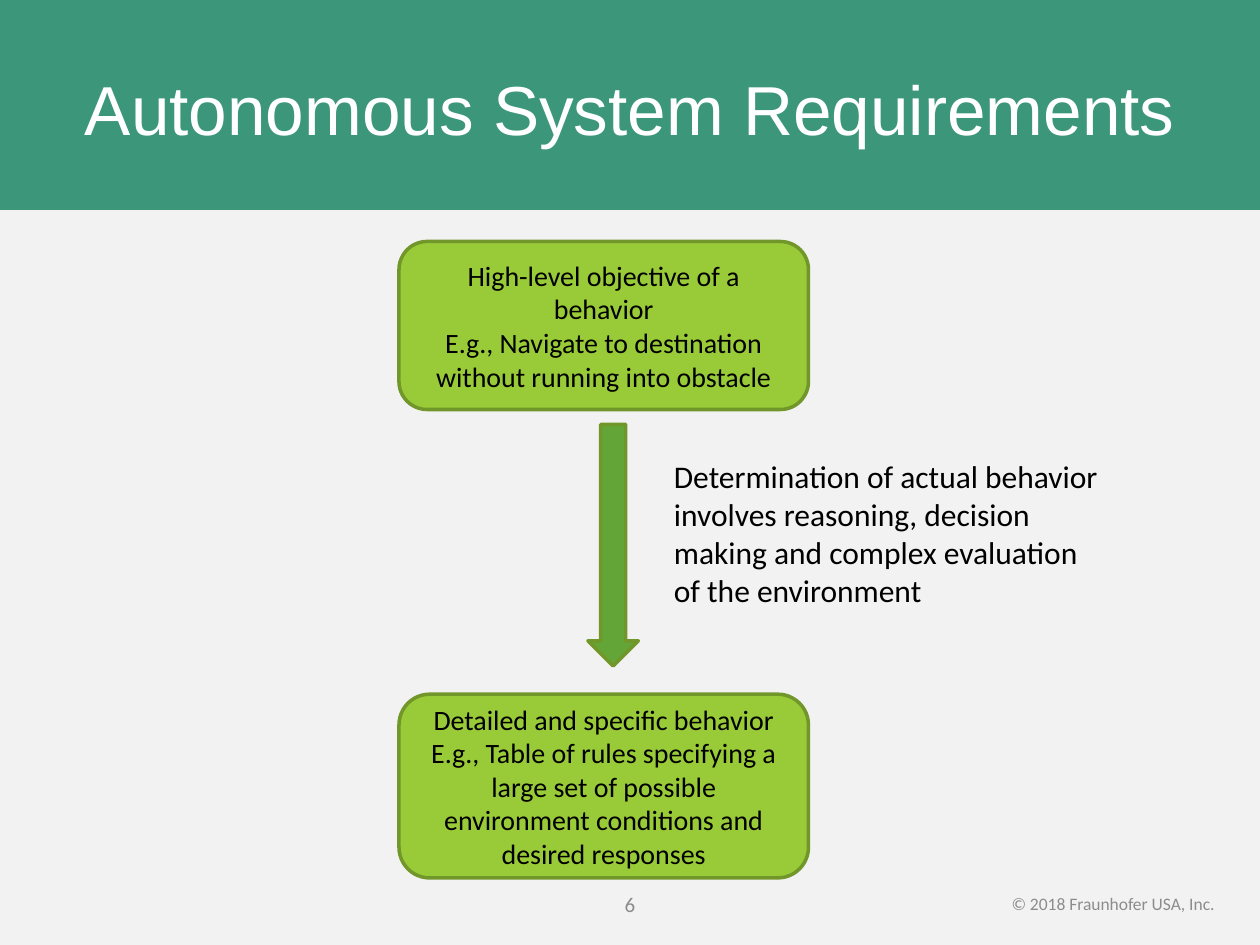
from dataclasses import dataclass
from typing import Optional

from pptx import Presentation
from pptx.dml.color import RGBColor
from pptx.enum.shapes import MSO_SHAPE
from pptx.enum.text import MSO_ANCHOR, PP_ALIGN
from pptx.util import Pt

WHITE = RGBColor(0xFF, 0xFF, 0xFF)
BLACK = RGBColor(0, 0, 0)
GRAY = RGBColor(0x8C, 0x8C, 0x8C)
PALE = RGBColor(0xF2, 0xF2, 0xF2)
TEAL = RGBColor(0x3C, 0x96, 0x79)
LIME = RGBColor(0x99, 0xCB, 0x38)
GREEN = RGBColor(0x63, 0xA5, 0x37)
OLIVE = RGBColor(0x71, 0x96, 0x29)


@dataclass
class Area:
    left: float
    top: float
    width: float
    height: float

    def lengths(self) -> list:
        return [Pt(n) for n in (self.left, self.top, self.width, self.height)]


@dataclass
class Text:
    lines: list[str]
    size: float
    color: RGBColor = BLACK
    font: str = "Calibri"
    align: PP_ALIGN = PP_ALIGN.CENTER
    anchor: MSO_ANCHOR = MSO_ANCHOR.MIDDLE


@dataclass
class Block:
    kind: MSO_SHAPE
    area: Area
    fill: RGBColor
    edge: Optional[RGBColor] = None
    text: Optional[Text] = None


@dataclass
class Label:
    area: Area
    text: Text


def write(shape, text: Text) -> None:
    frame = shape.text_frame
    frame.word_wrap = True
    frame.vertical_anchor = text.anchor
    frame.text = "\n".join(text.lines)
    style = {"name": text.font, "size": Pt(text.size)}
    for para in frame.paragraphs:
        para.alignment = text.align
        for run in para.runs:
            for key, value in style.items():
                setattr(run.font, key, value)
            run.font.color.rgb = text.color


def draw_block(slide, block: Block) -> None:
    shape = slide.shapes.add_shape(block.kind, *block.area.lengths())
    shape.shadow.inherit = False
    shape.fill.solid()
    shape.fill.fore_color.rgb = block.fill
    if block.edge is None:
        shape.line.fill.background()
    else:
        shape.line.color.rgb = block.edge
        shape.line.width = Pt(2)
    if block.text:
        write(shape, block.text)


def draw_label(slide, label: Label) -> None:
    write(slide.shapes.add_textbox(*label.area.lengths()), label.text)


# Header band, the two behavior levels and the arrow between them
BLOCKS = [
    Block(MSO_SHAPE.RECTANGLE, Area(0, 0, 720, 120), TEAL),
    Block(MSO_SHAPE.ROUNDED_RECTANGLE, Area(228, 138, 234, 96), LIME, OLIVE,
          Text(["High-level objective of a behavior",
                "E.g., Navigate to destination without running into obstacle"],
               16)),
    Block(MSO_SHAPE.ROUNDED_RECTANGLE, Area(228, 396.7, 234, 105), LIME, OLIVE,
          Text(["Detailed and specific behavior",
                "E.g., Table of rules specifying a large set of possible "
                "environment conditions and desired responses"], 16)),
    Block(MSO_SHAPE.DOWN_ARROW, Area(336, 242.6, 28.8, 138), GREEN, OLIVE),
]

# Title, note beside the arrow, and footer
LABELS = [
    Label(Area(36, 27.4, 648, 68.4),
          Text(["Autonomous System Requirements"], 39.6, WHITE, "Arial")),
    Label(Area(378, 257.8, 257.8, 94.3),
          Text(["Determination of actual behavior involves reasoning, decision "
                "making and complex evaluation of the environment"], 18,
               align=PP_ALIGN.LEFT, anchor=MSO_ANCHOR.TOP)),
    Label(Area(279, 502, 162, 28.8), Text(["6"], 12, GRAY)),
    Label(Area(570, 492, 132, 48),
          Text(["© 2018 Fraunhofer USA, Inc."], 10, GRAY)),
]


def main() -> None:
    deck = Presentation()
    deck.slide_width, deck.slide_height = Pt(720), Pt(540)
    slide = deck.slides.add_slide(deck.slide_layouts[6])
    slide.background.fill.solid()
    slide.background.fill.fore_color.rgb = PALE
    for block in BLOCKS:
        draw_block(slide, block)
    for label in LABELS:
        draw_label(slide, label)
    deck.save("out.pptx")


if __name__ == "__main__":
    main()
